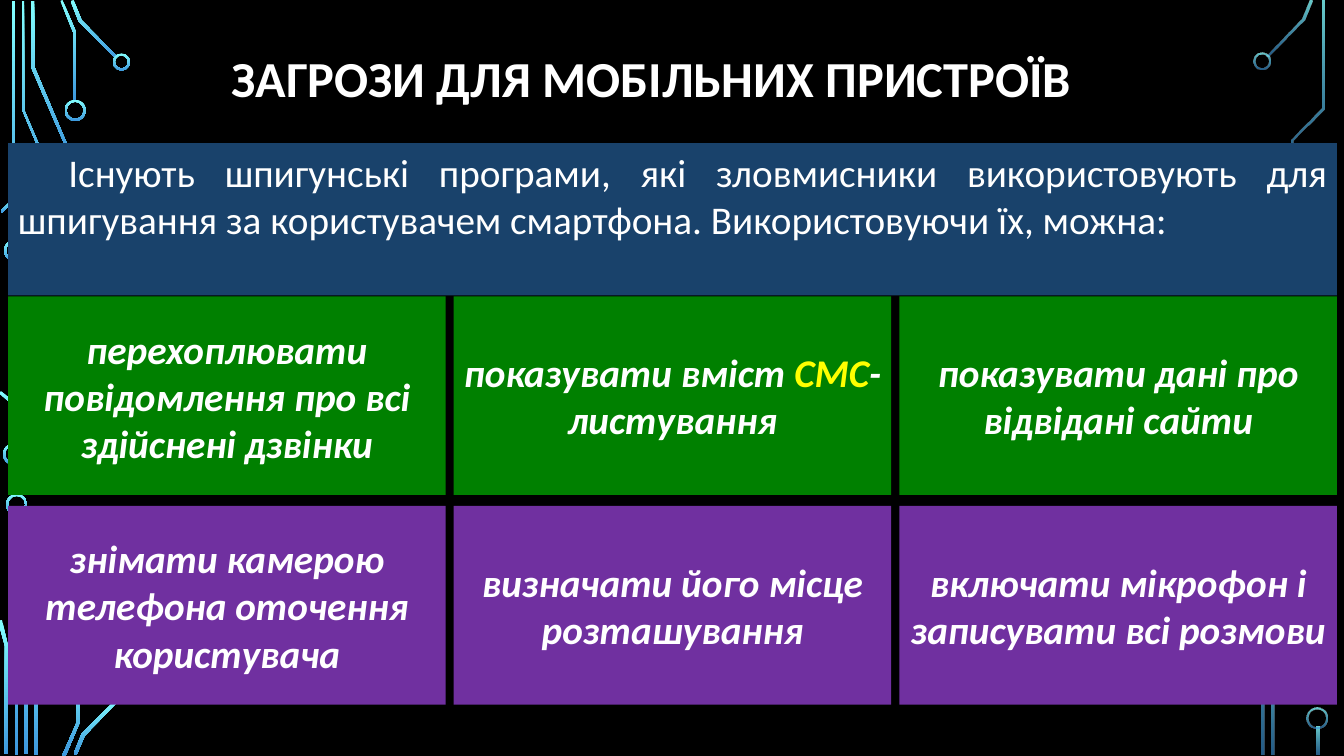
"""Build a slide on spyware threats to mobile devices."""
from dataclasses import dataclass

from pptx import Presentation
from pptx.dml.color import RGBColor
from pptx.enum.shapes import MSO_SHAPE
from pptx.enum.text import MSO_ANCHOR, PP_ALIGN
from pptx.oxml.ns import qn
from pptx.oxml.xmlchemy import OxmlElement
from pptx.util import Inches, Pt

RECT, DONUT = MSO_SHAPE.RECTANGLE, MSO_SHAPE.DONUT
TOP, MIDDLE = MSO_ANCHOR.TOP, MSO_ANCHOR.MIDDLE
CENTER, JUSTIFY = PP_ALIGN.CENTER, PP_ALIGN.JUSTIFY


@dataclass(frozen=True)
class Theme:
    font: str = "Calibri"
    title_size: int = 36
    body_size: int = 28
    background: str = "000000"
    text: str = "FFFFFF"
    accent: str = "FFFF00"
    banner: str = "19426B"
    green: str = "008000"
    purple: str = "7030A0"
    trace: tuple = ("82FFFF", "3D97DE")


@dataclass(frozen=True)
class Box:
    left: float
    top: float
    width: float
    height: float

    def emu(self) -> list:
        return [Inches(v) for v in (self.left, self.top, self.width, self.height)]


@dataclass(frozen=True)
class Run:
    text: str
    color: str


@dataclass(frozen=True)
class Circuit:
    bars: list
    rings: list
    tracks: list
    opacity: tuple


THEME = Theme()

LEFT_CIRCUIT = Circuit(
    bars=[Box(0.12, 0.01, 0.03, 2.39), Box(0.15, 5.1, 0.03, 2.39)],
    rings=[Box(0.04, 2.38, 0.21, 0.21), Box(0.03, 4.4, 0.21, 0.21),
           Box(0.64, 0.99, 0.21, 0.21), Box(1.12, 0.53, 0.17, 0.17),
           Box(0.06, 4.9, 0.21, 0.21)],
    tracks=[
        [(0.6, 1.99), (0.22, 1.09), (0.22, 0.01), (0.24, 0.01), (0.24, 1.09), (0.62, 1.98)],
        [(0.7, 1.57), (0.31, 0.67), (0.31, 0.01), (0.34, 0.01), (0.34, 0.66), (0.72, 1.56)],
        [(0.76, 1), (0.73, 1), (0.73, 0.33), (0.6, 0.01), (0.62, 0), (0.76, 0.33)],
        [(1.15, 0.58), (0.78, 0.21), (0.7, 0.01), (0.73, 0), (0.81, 0.2), (1.16, 0.56)],
        [(0.02, 2.11), (0.01, 2.09), (0.13, 1.97), (0.15, 1.99)],
        [(0.15, 4.41), (0.13, 4.41), (0.13, 4.02), (-0.01, 3.9), (0.01, 3.88), (0.15, 4)],
        [(0.27, 7.48), (0.24, 7.48), (0.24, 6.4), (0.62, 5.51), (0.65, 5.52), (0.27, 6.41)],
        [(0.08, 7.48), (0.05, 7.48), (0.05, 6.41), (-0.02, 6.16), (0.02, 6.15), (0.08, 6.41)],
        [(0.37, 7.49), (0.34, 7.49), (0.34, 6.82), (0.72, 5.93), (0.75, 5.94), (0.37, 6.83)],
        [(0.65, 7.5), (0.62, 7.49), (0.76, 7.17), (0.76, 6.5), (0.79, 6.5), (0.79, 7.17)],
        [(0.76, 7.49), (0.73, 7.48), (0.81, 7.28), (1.17, 6.92), (1.19, 6.94), (0.84, 7.3)],
    ],
    opacity=(100, 100),
)
RIGHT_CIRCUIT = Circuit(
    bars=[Box(13.06, 7.21, 0.03, 0.28)],
    rings=[Box(12.43, 0.52, 0.17, 0.17), Box(12.96, 7.02, 0.21, 0.21)],
    tracks=[
        [(12.58, 0.56), (12.56, 0.55), (12.91, 0.19), (12.99, 0), (13.02, 0.01), (12.94, 0.2)],
        [(12.64, 7.49), (12.61, 7.49), (12.61, 6.93), (12.92, 6.23), (12.94, 6.24), (12.64, 6.94)],
        [(12.83, 1.69), (12.81, 1.69), (12.81, 1.38), (13.11, 1.07),
         (13.11, 0.01), (13.14, 0.01), (13.14, 1.08), (12.83, 1.39)],
        [(12.54, 7.49), (12.51, 7.49), (12.51, 6.13), (12.82, 5.83),
         (12.82, 5.52), (12.85, 5.52), (12.85, 5.84), (12.54, 6.14)],
    ],
    opacity=(80, 60),
)

TITLE = "ЗАГРОЗИ ДЛЯ МОБІЛЬНИХ ПРИСТРОЇВ"
INTRO = ("Існують шпигунські програми, які зловмисники використовують для шпигування "
         "за користувачем смартфона. Використовуючи їх, можна:")
THREAT_ROWS = [
    (THEME.green, [
        [Run("перехоплювати повідомлення про всі здійснені дзвінки", THEME.text)],
        [Run("показувати вміст ", THEME.text), Run("СМС", THEME.accent),
         Run("-листування", THEME.text)],
        [Run("показувати дані про відвідані сайти", THEME.text)],
    ]),
    (THEME.purple, [
        [Run("знімати камерою телефона оточення користувача", THEME.text)],
        [Run("визначати його місце розташування", THEME.text)],
        [Run("включати мікрофон і записувати всі розмови", THEME.text)],
    ]),
]


def paint_trace(sp, opacity: tuple) -> None:
    sp.shadow.inherit = False
    sp.line.fill.background()
    sp.fill.gradient()
    sp.fill.gradient_angle = 270
    for stop, color in zip(sp.fill.gradient_stops, THEME.trace):
        stop.color.rgb = RGBColor.from_string(color)
    for clr, percent in zip(sp._element.spPr.iter(qn("a:srgbClr")), opacity):
        if percent < 100:
            alpha = OxmlElement("a:alpha")
            alpha.set("val", str(percent * 1000))
            clr.append(alpha)


def draw_circuit(shapes, circuit: Circuit) -> None:
    for track in circuit.tracks:
        start, *rest = [(Inches(x), Inches(y)) for x, y in track]
        builder = shapes.build_freeform(*start)
        builder.add_line_segments(rest, close=True)
        paint_trace(builder.convert_to_shape(), circuit.opacity)
    for bar in circuit.bars:
        paint_trace(shapes.add_shape(RECT, *bar.emu()), circuit.opacity)
    for ring in circuit.rings:
        sp = shapes.add_shape(DONUT, *ring.emu())
        sp.adjustments[0] = 0.02 / ring.width
        paint_trace(sp, circuit.opacity)


def write(sp, runs: list, size: int, anchor=MIDDLE, align=CENTER,
          bold: bool = False, italic: bool = False):
    tf = sp.text_frame
    tf.word_wrap = True
    tf.vertical_anchor = anchor
    p = tf.paragraphs[0]
    p.alignment = align
    for run in runs:
        r = p.add_run()
        r.text = run.text
        r.font.name = THEME.font
        r.font.size = Pt(size)
        r.font.bold = bold
        r.font.italic = italic
        r.font.color.rgb = RGBColor.from_string(run.color)
    return p


def add_panel(shapes, box: Box, color: str):
    sp = shapes.add_shape(RECT, *box.emu())
    sp.shadow.inherit = False
    sp.fill.solid()
    sp.fill.fore_color.rgb = RGBColor.from_string(color)
    sp.line.fill.background()
    return sp


def main() -> None:
    prs = Presentation()
    prs.slide_width, prs.slide_height = Inches(13.33), Inches(7.5)
    s = prs.slides.add_slide(prs.slide_layouts[6])
    s.background.fill.solid()
    s.background.fill.fore_color.rgb = RGBColor.from_string(THEME.background)

    for circuit in (LEFT_CIRCUIT, RIGHT_CIRCUIT):
        draw_circuit(s.shapes, circuit)

    title = s.shapes.add_textbox(*Box(1.05, 0, 10.83, 1.62).emu())
    p = write(title, [Run(TITLE, THEME.text)], THEME.title_size, bold=True)
    p.line_spacing = 0.9

    banner = add_panel(s.shapes, Box(0.08, 1.42, 13.18, 1.51), THEME.banner)
    p = write(banner, [Run(INTRO, THEME.text)], THEME.body_size, TOP, JUSTIFY)
    p._p.get_or_add_pPr().set("indent", str(Inches(0.5)))

    for row, (color, threats) in enumerate(THREAT_ROWS):
        for col, runs in enumerate(threats):
            box = Box(0.08 + 4.42 * col, 2.94 + 2.08 * row, 4.34, 1.97)
            write(add_panel(s.shapes, box, color), runs, THEME.body_size,
                  bold=True, italic=True)

    prs.save("out.pptx")


if __name__ == "__main__":
    main()
